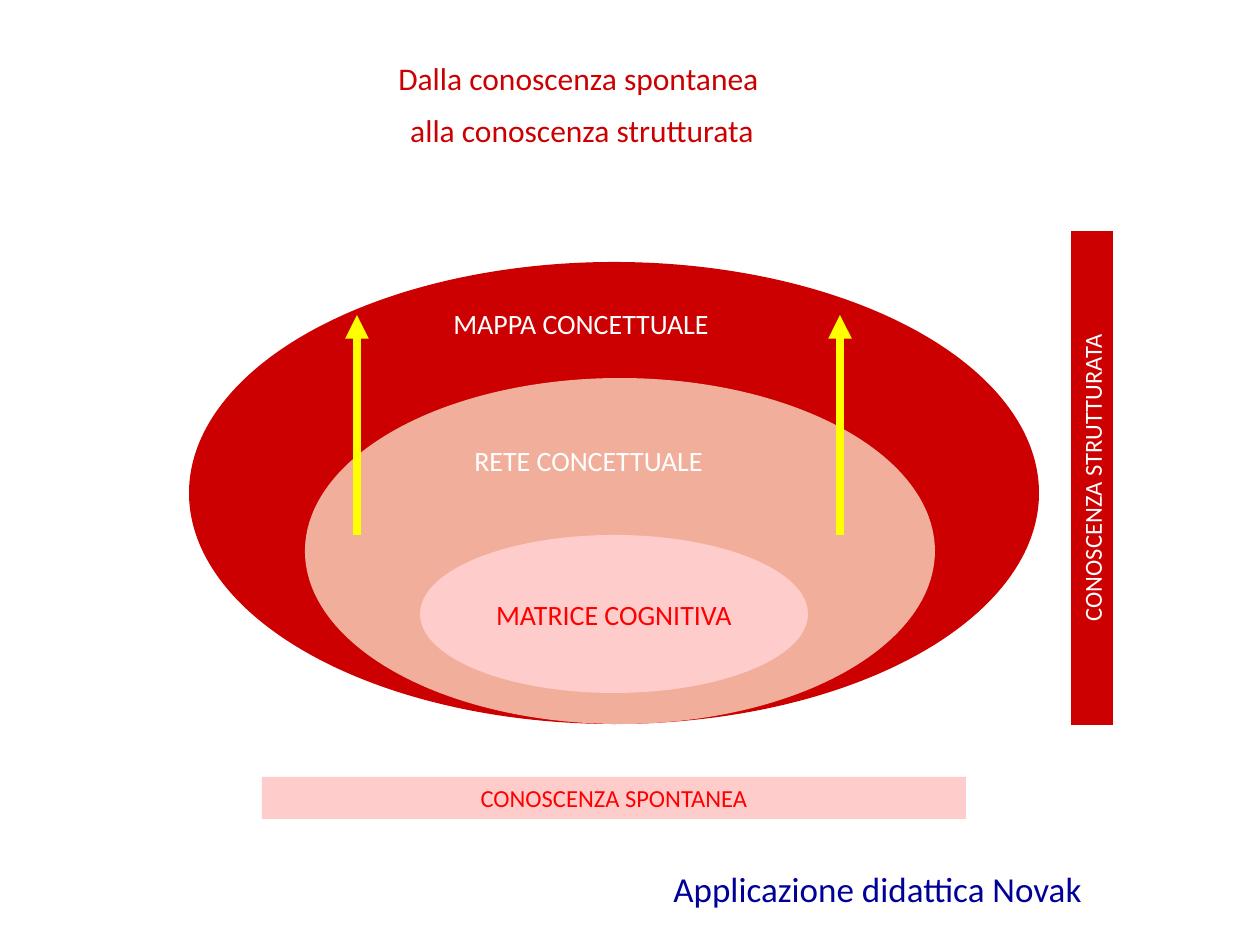
from dataclasses import dataclass
from typing import Optional

from lxml import etree
from pptx import Presentation
from pptx.dml.color import RGBColor
from pptx.enum import shapes, text
from pptx.oxml import ns
from pptx.util import Emu, Pt

PX = 914400 / 126
FONT = "Calibri"
RED = RGBColor(0xCC, 0x00, 0x00)
BRIGHT_RED = RGBColor(0xFF, 0x00, 0x00)
SALMON = RGBColor(0xF1, 0xAF, 0x9B)
PINK = RGBColor(0xFF, 0xCC, 0xCC)
YELLOW = RGBColor(0xFF, 0xFF, 0x00)
NAVY = RGBColor(0x00, 0x00, 0x99)
WHITE = RGBColor(0xFF, 0xFF, 0xFF)

OVAL = shapes.MSO_SHAPE.OVAL
BAR = shapes.MSO_SHAPE.RECTANGLE
BUTTON = shapes.MSO_SHAPE.ACTION_BUTTON_CUSTOM
LEFT, CENTER = text.PP_ALIGN.LEFT, text.PP_ALIGN.CENTER


@dataclass
class Label:
    lines: tuple[str, ...]
    size: int
    color: RGBColor
    align: text.PP_ALIGN = CENTER
    wrap: bool = False
    gap: int = 0


@dataclass
class Area:
    box: tuple[int, int, int, int]
    kind: shapes.MSO_SHAPE
    fill: RGBColor
    label: Optional[Label] = None
    rotation: int = 0


@dataclass
class Caption:
    box: tuple[int, int, int, int]
    label: Label


AREAS = [
    # Nested levels of knowledge, from the outside in
    Area((189, 262, 850, 462), OVAL, RED),
    Area((305, 378, 630, 346), OVAL, SALMON),
    Area((420, 535, 388, 158), OVAL, PINK,
         Label(("MATRICE COGNITIVA",), 16, BRIGHT_RED)),
    # Bars naming the two kinds of knowledge
    Area((262, 777, 704, 42), BAR, PINK,
         Label(("CONOSCENZA SPONTANEA",), 14, BRIGHT_RED)),
    Area((845, 457, 494, 42), BUTTON, RED,
         Label(("CONOSCENZA STRUTTURATA",), 14, WHITE), rotation=270),
]

CAPTIONS = [
    Caption((462, 437, 346, 47),
            Label(("RETE CONCETTUALE",), 16, WHITE, LEFT, True)),
    Caption((441, 300, 388, 47),
            Label(("MAPPA CONCETTUALE",), 16, WHITE, LEFT, True)),
    Caption((73, 53, 1018, 138),
            Label(("Dalla conoscenza spontanea ", "alla conoscenza strutturata"),
                  18, RED, CENTER, True, gap=8)),
    Caption((661, 861, 509, 54),
            Label(("Applicazione didattica Novak",), 20, NAVY, LEFT)),
]

ARROW_XS = (357, 840)
ARROW_BOTTOM, ARROW_TOP = 535, 315


def px(*lengths: int) -> list[Emu]:
    return [Emu(round(length * PX)) for length in lengths]


def write_label(frame, label: Label, anchor: text.MSO_ANCHOR) -> None:
    frame.word_wrap = label.wrap
    frame.vertical_anchor = anchor
    for index, line in enumerate(label.lines):
        paragraph = frame.add_paragraph() if index else frame.paragraphs[0]
        paragraph.alignment = label.align
        paragraph.space_before = Pt(label.gap)
        run = paragraph.add_run()
        run.text = line
        run.font.color.rgb = label.color
        for name, value in {"name": FONT, "size": Pt(label.size)}.items():
            setattr(run.font, name, value)


def draw_area(slide, area: Area) -> None:
    shape = slide.shapes.add_shape(area.kind, *px(*area.box))
    shape.shadow.inherit = False
    shape.fill.solid()
    shape.fill.fore_color.rgb = area.fill
    shape.line.fill.background()
    shape.rotation = area.rotation
    if area.label:
        write_label(shape.text_frame, area.label, text.MSO_ANCHOR.MIDDLE)


def draw_caption(slide, caption: Caption) -> None:
    shape = slide.shapes.add_textbox(*px(*caption.box))
    write_label(shape.text_frame, caption.label, text.MSO_ANCHOR.TOP)


def draw_arrow(slide, x: int) -> None:
    arrow = slide.shapes.add_connector(
        shapes.MSO_CONNECTOR.STRAIGHT, *px(x, ARROW_BOTTOM, x, ARROW_TOP))
    arrow.line.color.rgb = YELLOW
    arrow.line.width = Pt(4.5)
    line = arrow.line._get_or_add_ln()
    etree.SubElement(line, ns.qn("a:tailEnd"), type="triangle")
    etree.SubElement(arrow._element.spPr, ns.qn("a:effectLst"))


def main() -> None:
    presentation = Presentation()
    presentation.slide_width, presentation.slide_height = px(1260, 945)
    slide = presentation.slides.add_slide(presentation.slide_layouts[6])

    for area in AREAS:
        draw_area(slide, area)
    for caption in CAPTIONS:
        draw_caption(slide, caption)
    # Upward growth from spontaneous to structured knowledge
    for x in ARROW_XS:
        draw_arrow(slide, x)

    presentation.save("out.pptx")


if __name__ == "__main__":
    main()
